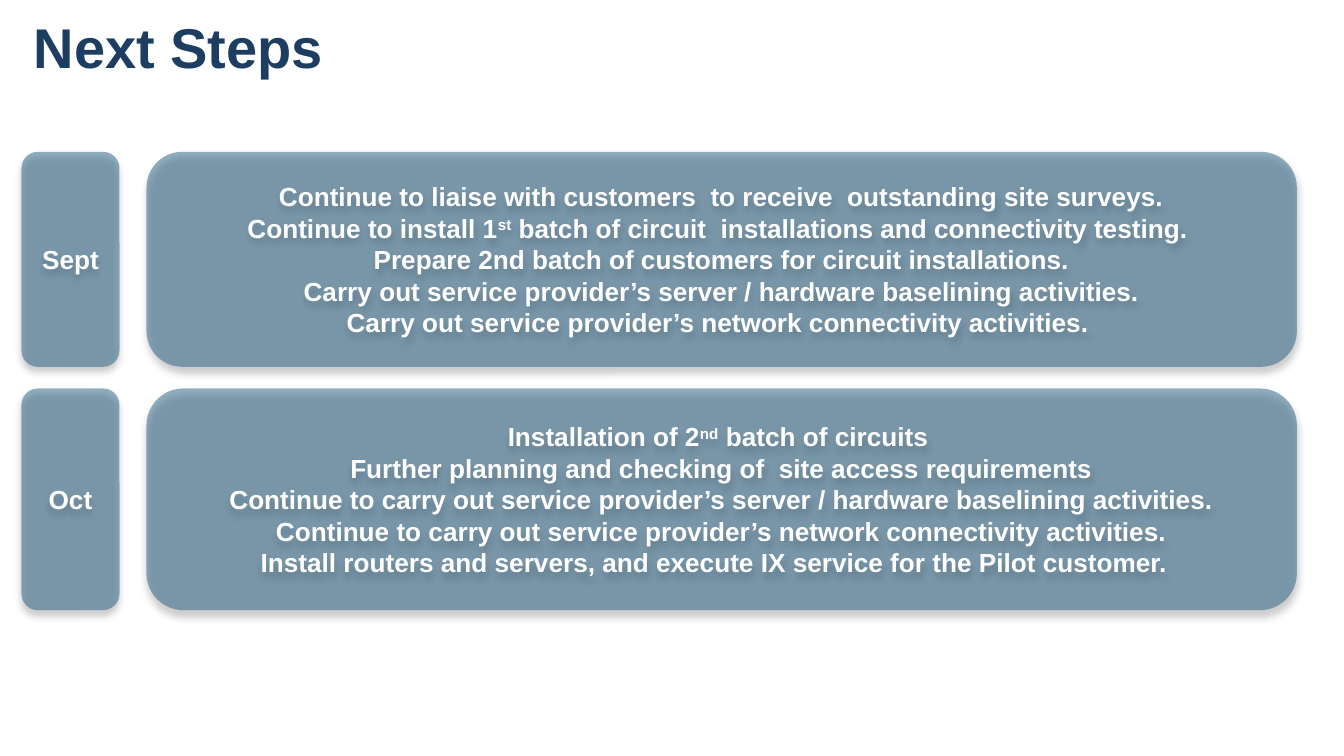
from lxml import etree
from pptx import Presentation
from pptx.dml.color import RGBColor
from pptx.enum.shapes import MSO_SHAPE
from pptx.enum.text import MSO_ANCHOR, PP_ALIGN
from pptx.oxml import parse_xml
from pptx.oxml.ns import nsdecls, qn
from pptx.util import Inches, Pt

ROUNDED = MSO_SHAPE.ROUNDED_RECTANGLE
MIDDLE = MSO_ANCHOR.MIDDLE
LEFT, CENTER = PP_ALIGN.LEFT, PP_ALIGN.CENTER
TITLE_ONLY = 5
FONT = "Arial"
COLORS = {"title": "1D3E61", "panel": "286187", "text": "FFFFFF", "shadow": "000000"}
MONTH_COLUMN = (0.16, 0.73)
TASK_COLUMN = (1.09, 8.56)
MONTHS = [
    ("Sept", 1.13, 1.6, [
        ["Continue to liaise with customers  to receive  outstanding site surveys."],
        ["Continue to install 1", "st",
         " batch of circuit  installations and connectivity testing. "],
        ["Prepare 2nd batch of customers for circuit installations."],
        ["Carry out service provider’s server / hardware baselining activities."],
        ["Carry out service provider’s network connectivity activities. "],
    ]),
    ("Oct", 2.89, 1.65, [
        ["Installation of 2", "nd", " batch of circuits "],
        ["Further planning and checking of  site access requirements"],
        ["Continue to carry out service provider’s server / hardware baselining activities."],
        ["Continue to carry out service provider’s network connectivity activities."],
        ["Install routers and servers, and execute IX service for the Pilot customer.  "],
    ]),
]


def add_run(paragraph, text, size, color, raised=False):
    """Add one bold run, optionally as superscript."""
    run = paragraph.add_run()
    run.text = text
    run.font.name = FONT
    run.font.size = Pt(size)
    run.font.bold = True
    run.font.color.rgb = RGBColor.from_string(COLORS[color])
    if raised:
        run.font._element.set("baseline", "30000")


def add_title(slide, text):
    """Place and format the slide title."""
    title = slide.shapes.title
    title.left, title.top = Inches(0.25), Inches(-0.05)
    title.width, title.height = Inches(9.5), Inches(0.79)
    frame = title.text_frame
    frame.margin_left = frame.margin_right = frame.margin_top = frame.margin_bottom = 0
    frame.vertical_anchor = MIDDLE
    frame.paragraphs[0].alignment = LEFT
    add_run(frame.paragraphs[0], text, 30, "title")


def add_glass_effect(panel):
    """Make the panel fill half transparent and give it a soft shadow."""
    properties = panel._element.spPr
    fill_color = properties.find(qn("a:solidFill"))[0]
    etree.SubElement(fill_color, qn("a:alpha")).set("val", "50000")
    properties.append(parse_xml(
        f'<a:effectLst {nsdecls("a")}>'
        f'<a:outerShdw blurRad="{Pt(4)}" dist="{Pt(3)}" dir="5400000" rotWithShape="0">'
        f'<a:srgbClr val="{COLORS["shadow"]}"><a:alpha val="40000"/></a:srgbClr>'
        '</a:outerShdw></a:effectLst>'))


def add_panel(slide, column, top, height, lines):
    """Add a rounded panel; every second part of a line is superscript."""
    left, width = column
    panel = slide.shapes.add_shape(
        ROUNDED, Inches(left), Inches(top), Inches(width), Inches(height))
    panel.fill.solid()
    panel.fill.fore_color.rgb = RGBColor.from_string(COLORS["panel"])
    panel.line.fill.background()
    add_glass_effect(panel)
    frame = panel.text_frame
    frame.word_wrap = False
    frame.vertical_anchor = MIDDLE
    for index, parts in enumerate(lines):
        paragraph = frame.add_paragraph() if index else frame.paragraphs[0]
        paragraph.alignment = CENTER
        for position, part in enumerate(parts):
            add_run(paragraph, part, 14, "text", raised=position % 2 == 1)


def main():
    """Build the next-steps slide and save it."""
    presentation = Presentation()
    presentation.slide_width = Inches(10)
    presentation.slide_height = Inches(10 * 9 / 16)
    slide = presentation.slides.add_slide(presentation.slide_layouts[TITLE_ONLY])
    add_title(slide, "Next Steps")
    for column in (TASK_COLUMN, MONTH_COLUMN):
        for month, top, height, tasks in MONTHS:
            lines = tasks if column == TASK_COLUMN else [[month]]
            add_panel(slide, column, top, height, lines)
    presentation.save("out.pptx")


if __name__ == "__main__":
    main()
